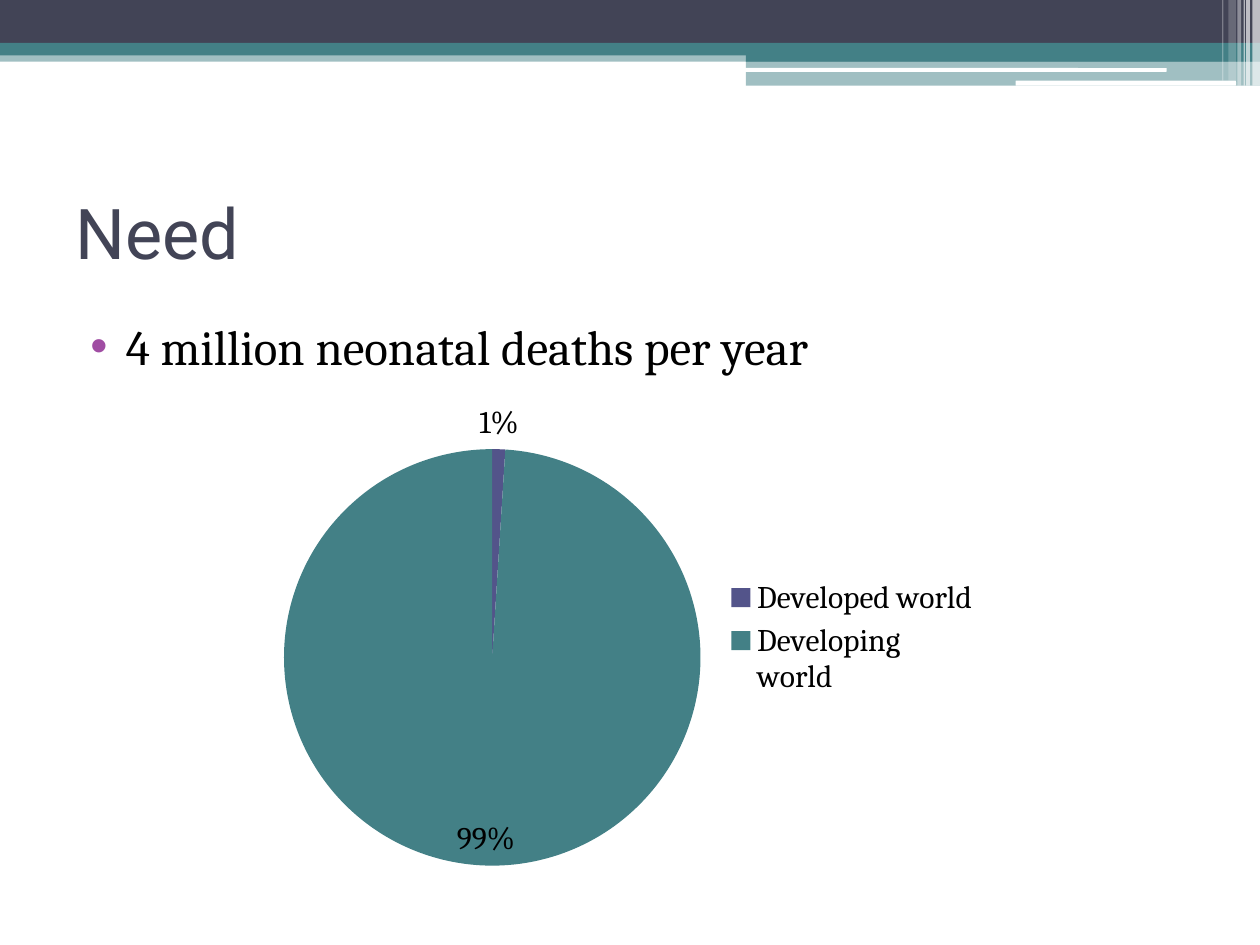
from lxml import etree
from pptx import Presentation
from pptx.chart.data import CategoryChartData
from pptx.dml.color import RGBColor
from pptx.enum import chart as ch, shapes, text
from pptx.oxml import parse_xml
from pptx.oxml.ns import nsdecls, qn
from pptx.util import Inches, Pt

NAVY = RGBColor(0x42, 0x44, 0x56)
TEAL = RGBColor(0x43, 0x80, 0x86)
PURPLE = RGBColor(0x53, 0x54, 0x8A)
PINK = RGBColor(0xA0, 0x4D, 0xA3)
WHITE = RGBColor(255, 255, 255)
BLACK = RGBColor(0, 0, 0)
RECT = shapes.MSO_SHAPE.RECTANGLE
ROUND = shapes.MSO_SHAPE.ROUNDED_RECTANGLE

prs = Presentation()
prs.slide_width, prs.slide_height = Inches(10), Inches(7.5)
slide = prs.slides.add_slide(prs.slide_layouts[6])

bars = [
    (RECT, 0, 0.4, 10, 0.09, TEAL, 50),
    (RECT, 0, 0, 10, 0.34, NAVY, 100),
    (RECT, 0, 0.34, 10, 0.1, TEAL, 100),
    (RECT, 5.92, 0.39, 4.08, 0.1, TEAL, 100),
    (RECT, 5.92, 0.48, 4.08, 0.2, TEAL, 50),
    (ROUND, 5.91, 0.54, 3.35, 0.03, WHITE, 100),
    (ROUND, 8.06, 0.64, 1.75, 0.04, WHITE, 100),
    (RECT, 9.94, 0, 0.06, 0.68, WHITE, 65),
    (RECT, 9.89, 0, 0.03, 0.68, WHITE, 65),
    (RECT, 9.87, 0, 0.01, 0.68, WHITE, 60),
    (RECT, 9.82, 0, 0.03, 0.68, WHITE, 40),
    (RECT, 9.75, 0, 0.06, 0.64, WHITE, 20),
    (RECT, 9.7, 0, 0.01, 0.64, WHITE, 30),
]
for kind, x, y, w, h, tint, alpha in bars:
    bar = slide.shapes.add_shape(kind, Inches(x), Inches(y), Inches(w), Inches(h))
    bar.shadow.inherit = False
    bar.line.fill.background()
    bar.fill.solid()
    bar.fill.fore_color.rgb = tint
    if alpha < 100:
        clr = bar.fill._xPr.find(qn("a:solidFill"))[0]
        etree.SubElement(clr, qn("a:alpha")).set("val", str(alpha * 1000))


def write(words, y, h, size, face, tint, anchor):
    box = slide.shapes.add_textbox(Inches(0.5), Inches(y), Inches(9), Inches(h))
    frame = box.text_frame
    frame.word_wrap = True
    frame.vertical_anchor = anchor
    frame.text = words
    font = frame.paragraphs[0].runs[0].font
    font.size, font.name = Pt(size), face
    font.color.rgb = tint
    return frame.paragraphs[0]


write("Need", 1.25, 1.17, 40, "Roboto", NAVY, text.MSO_ANCHOR.MIDDLE)
item = write("4 million neonatal deaths per year", 2.46, 4.73, 28, "Cambria", BLACK,
             text.MSO_ANCHOR.TOP)
item.space_before = Pt(3)
props = item._p.get_or_add_pPr()
props.set("marL", str(Inches(0.4)))
props.set("indent", str(Inches(-0.28)))
props.append(parse_xml(f'<a:buClr {nsdecls("a")}><a:srgbClr val="{PINK}"/></a:buClr>'))
props.append(parse_xml(f'<a:buFont {nsdecls("a")} typeface="Arial"/>'))
props.append(parse_xml(f'<a:buChar {nsdecls("a")} char="•"/>'))

data = CategoryChartData(number_format="0%")
data.categories = ["Developed world", "Developing world"]
data.add_series("Series 1", (0.01, 0.99))
pie = slide.shapes.add_chart(ch.XL_CHART_TYPE.PIE, Inches(2.08), Inches(3.08),
                             Inches(5.8), Inches(3.96), data).chart
pie.has_title = False
pie.font.size, pie.font.name = Pt(18), "Cambria"
pie.font.color.rgb = BLACK
pie.has_legend = True
pie.legend.position = ch.XL_LEGEND_POSITION.RIGHT
pie.legend.include_in_layout = False

plot = pie.plots[0]
plot.vary_by_categories = True
plot.has_data_labels = True
tags = plot.data_labels
tags.show_value = True
tags.show_percentage = False
tags.number_format = "0%"
tags.number_format_is_linked = False
tags.position = ch.XL_LABEL_POSITION.BEST_FIT
for i, tint in enumerate((PURPLE, TEAL)):
    fill = plot.series[0].points[i].format.fill
    fill.solid()
    fill.fore_color.rgb = tint

area = pie._chartSpace.chart.plotArea
for old in area.findall(qn("c:layout")):
    area.remove(old)
area.insert(0, parse_xml(
    f'<c:layout {nsdecls("c")}><c:manualLayout><c:layoutTarget val="inner"/>'
    '<c:xMode val="edge"/><c:yMode val="edge"/><c:x val="0.03"/><c:y val="0.12"/>'
    '<c:w val="0.57"/><c:h val="0.84"/></c:manualLayout></c:layout>'))

prs.save("out.pptx")
